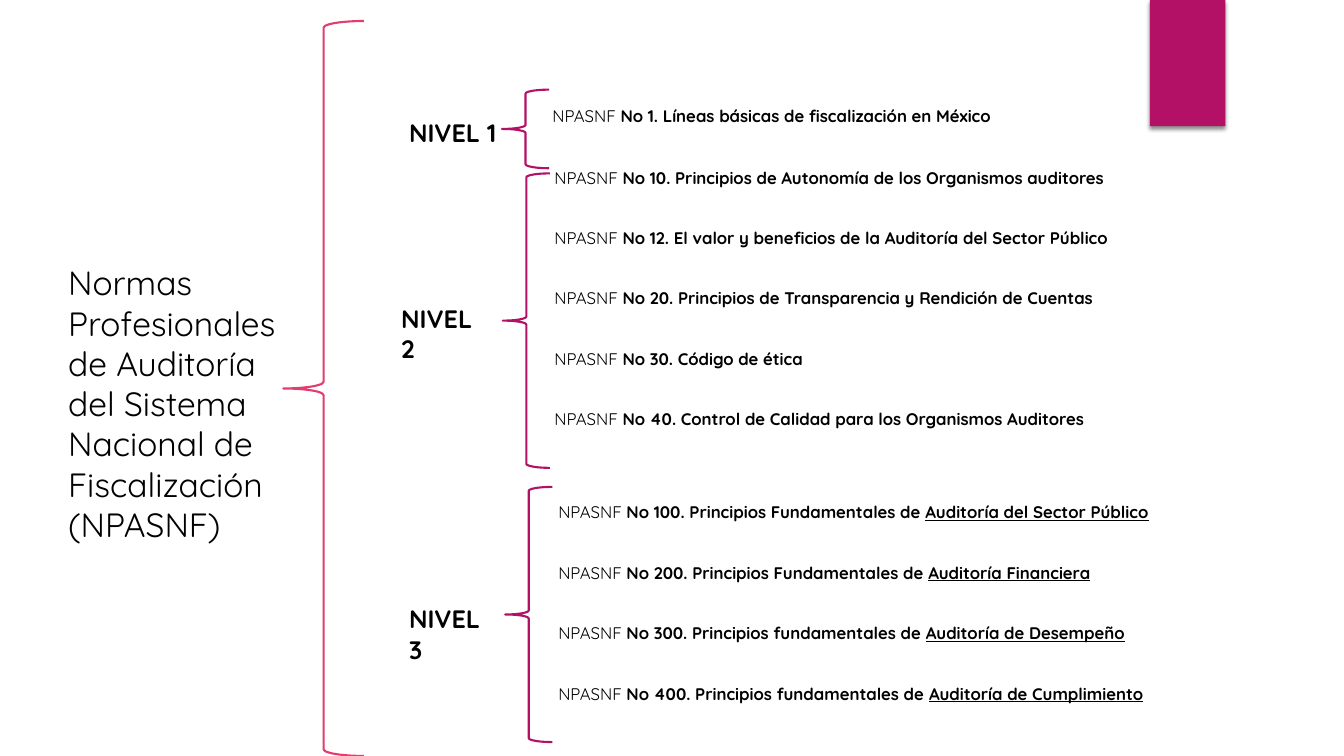
from dataclasses import dataclass

from lxml import etree
from pptx import Presentation
from pptx.dml.color import RGBColor
from pptx.enum.shapes import MSO_SHAPE
from pptx.enum.text import MSO_AUTO_SIZE
from pptx.oxml import parse_xml
from pptx.shapes.autoshape import Shape
from pptx.slide import Slide
from pptx.util import Cm, Pt

RECT = MSO_SHAPE.RECTANGLE
BRACE = MSO_SHAPE.LEFT_BRACE
GROW = MSO_AUTO_SIZE.SHAPE_TO_FIT_TEXT
FONT = "Quicksand"
BLACK, WINE, PINK = "000000", "B31166", "E33D6F"
GAP = 28.8  # two text lines between norms
SHADOW = (
    '<a:effectLst xmlns:a="http://schemas.openxmlformats.org/drawingml/2006/main">'
    '<a:outerShdw blurRad="38100" dist="25400" dir="5400000" rotWithShape="0">'
    '<a:srgbClr val="000000"><a:alpha val="45000"/></a:srgbClr>'
    "</a:outerShdw></a:effectLst>"
)


@dataclass
class Box:
    left: float
    top: float
    width: float
    height: float

    def size(self) -> tuple[Cm, Cm, Cm, Cm]:
        return Cm(self.left), Cm(self.top), Cm(self.width), Cm(self.height)


@dataclass
class Run:
    text: str
    bold: bool = False
    line: bool = False


@dataclass
class Norm:
    name: str
    topic: str = ""

    def runs(self) -> list[Run]:
        parts = [Run("NPASNF "), Run(self.name, bold=True)]
        if self.topic:
            parts.append(Run(self.topic, bold=True, line=True))
        return parts


@dataclass
class Level:
    title: str
    label: Box
    brace: Box
    body: Box
    norms: list[Norm]


LEVELS = [
    Level(
        "NIVEL 1",
        Box(10.06, 2.82, 2.79, 1.02),
        Box(12.65, 2.26, 1.19, 1.98),
        Box(13.67, 2.54, 20.2, 0.76),
        [Norm("No 1. Líneas básicas de fiscalización en México")],
    ),
    Level(
        "NIVEL 2",
        Box(9.86, 7.52, 2.79, 1.02),
        Box(12.67, 4.37, 1.19, 7.42),
        Box(13.72, 4.09, 20.14, 6.93),
        [
            Norm("No 10. Principios de Autonomía de los Organismos auditores"),
            Norm("No 12. El valor y beneficios de la Auditoría del Sector Público"),
            Norm("No 20. Principios de Transparencia y Rendición de Cuentas"),
            Norm("No 30. Código de ética"),
            Norm("No 40. Control de Calidad para los Organismos Auditores"),
        ],
    ),
    Level(
        "NIVEL 3",
        Box(10.06, 15.09, 2.79, 1.02),
        Box(12.73, 12.27, 1.19, 6.43),
        Box(13.82, 12.52, 20.04, 5.38),
        [
            Norm("No 100. Principios Fundamentales de ", "Auditoría del Sector Público"),
            Norm("No 200. Principios Fundamentales de ", "Auditoría Financiera"),
            Norm("No 300. Principios fundamentales de ", "Auditoría de Desempeño"),
            Norm("No 400. Principios fundamentales de ", "Auditoría de Cumplimiento"),
        ],
    ),
]


def color(code: str) -> RGBColor:
    return RGBColor.from_string(code)


def add_text(
    slide: Slide, box: Box, paras: list[list[Run]], *, size: float, gap: float = 0
) -> Shape:
    shape = slide.shapes.add_textbox(*box.size())
    frame = shape.text_frame
    frame.word_wrap = True
    frame.auto_size = GROW
    for i, runs in enumerate(paras):
        para = frame.paragraphs[0] if i == 0 else frame.add_paragraph()
        if i and gap:
            para.space_before = Pt(gap)
        for part in runs:
            run = para.add_run()
            run.text = part.text
            font = run.font
            font.name, font.size = FONT, Pt(size)
            font.bold, font.underline = part.bold, part.line
            font.color.rgb = color(BLACK)
    return shape


def add_brace(slide: Slide, box: Box, code: str) -> Shape:
    shape = slide.shapes.add_shape(BRACE, *box.size())
    shape.shadow.inherit = False
    shape.fill.background()
    shape.line.color.rgb = color(code)
    shape.line.width = Pt(1.5)
    return shape


def add_tab(slide: Slide, box: Box) -> None:
    """Draw the coloured tab with a soft shadow below it."""
    shape = slide.shapes.add_shape(RECT, *box.size())
    shape.fill.solid()
    shape.fill.fore_color.rgb = color(WINE)
    shape.line.fill.background()
    shape.shadow.inherit = False
    props = shape.fill._xPr
    old = props.find("{*}effectLst")
    props.replace(old, parse_xml(etree.tostring(etree.fromstring(SHADOW))))


def add_level(slide: Slide, level: Level) -> None:
    add_text(slide, level.label, [[Run(level.title, bold=True)]], size=18)
    add_brace(slide, level.brace, WINE)
    norms = [norm.runs() for norm in level.norms]
    add_text(slide, level.body, norms, size=12, gap=GAP)


def main() -> None:
    deck = Presentation()
    deck.slide_width, deck.slide_height = Cm(33.87), Cm(19.05)
    slide = deck.slides.add_slide(deck.slide_layouts[6])
    add_tab(slide, Box(28.98, 0, 1.9, 3.18))
    title = [
        [Run("Normas Profesionales de Auditoría del Sistema Nacional de Fiscalización")],
        [Run("(NPASNF)")],
    ]
    add_text(slide, Box(1.47, 6.48, 5.84, 7.44), title, size=24)
    add_brace(slide, Box(7.14, 0.53, 2.03, 18.52), PINK)
    for level in LEVELS:
        add_level(slide, level)
    deck.save("out.pptx")


if __name__ == "__main__":
    main()
